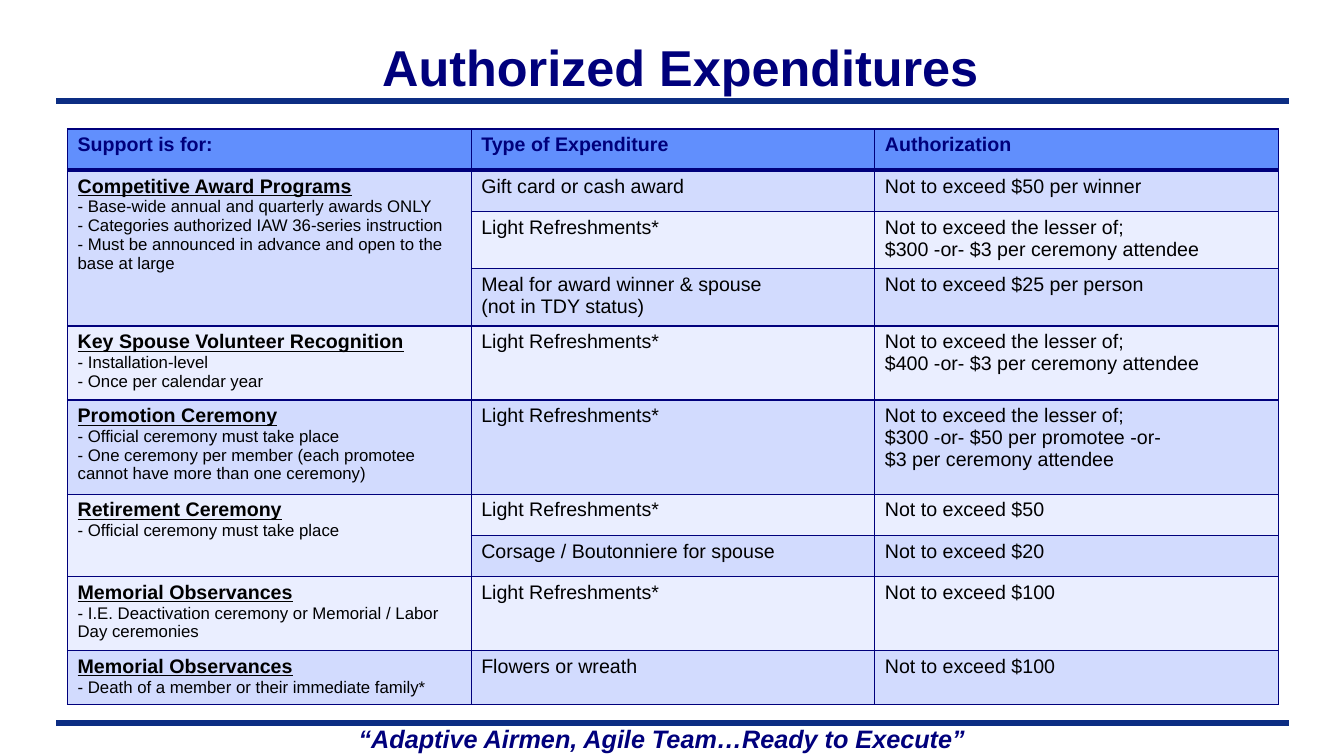
from lxml.etree import SubElement as Sub
from pptx import Presentation
from pptx.dml.color import RGBColor
from pptx.enum.shapes import MSO_CONNECTOR as Conn
from pptx.enum.text import MSO_ANCHOR as Anchor, PP_ALIGN as Align
from pptx.oxml.ns import qn
from pptx.util import Inches, Pt

NAVY, RULE, HEAD = "00007C", "0C2D83", "618FFD"
BANDS = "D2DBFE", "EAEEFF"
LIGHT = "Light Refreshments*"
LESSER = "Not to exceed the lesser of;\n"
HEADS = "Support is for:", "Type of Expenditure", "Authorization"

# Each group: support text, then its (expenditure, authorization) rows
GROUPS = [
    ("Competitive Award Programs\n"
     "- Base-wide annual and quarterly awards ONLY\n"
     "- Categories authorized IAW 36-series instruction\n"
     "- Must be announced in advance and open to the base at large",
     [("Gift card or cash award", "Not to exceed $50 per winner"),
      (LIGHT, LESSER + "$300 -or- $3 per ceremony attendee"),
      ("Meal for award winner & spouse\n(not in TDY status)",
       "Not to exceed $25 per person")]),
    ("Key Spouse Volunteer Recognition\n"
     "- Installation-level\n- Once per calendar year",
     [(LIGHT, LESSER + "$400 -or- $3 per ceremony attendee")]),
    ("Promotion Ceremony\n- Official ceremony must take place\n"
     "- One ceremony per member (each promotee cannot have more than one ceremony)",
     [(LIGHT, LESSER + "$300 -or- $50 per promotee -or-\n$3 per ceremony attendee")]),
    ("Retirement Ceremony\n- Official ceremony must take place",
     [(LIGHT, "Not to exceed $50"),
      ("Corsage / Boutonniere for spouse", "Not to exceed $20")]),
    ("Memorial Observances\n"
     "- I.E. Deactivation ceremony or Memorial / Labor Day ceremonies",
     [(LIGHT, "Not to exceed $100")]),
    ("Memorial Observances\n- Death of a member or their immediate family*",
     [("Flowers or wreath", "Not to exceed $100")]),
]


def color(code):
    return RGBColor.from_string(code)


def style(para, size, code, bold=False, italic=False, under=False):
    for run in para.runs:
        font = run.font
        font.name, font.size = "Arial", Pt(size)
        font.bold, font.italic, font.underline = bold, italic, under
        font.color.rgb = color(code)


def rule(slide, left, top, width):
    line = slide.shapes.add_connector(
        Conn.STRAIGHT, Inches(left), Inches(top), Inches(left + width), Inches(top))
    line.line.color.rgb = color(RULE)
    line.line.width = Pt(4.5)
    Sub(line._element.spPr, qn("a:effectLst"))


def label(slide, box, text, size, wrap=True, italic=False):
    frame = slide.shapes.add_textbox(*map(Inches, box)).text_frame
    frame.word_wrap = wrap
    frame.vertical_anchor = Anchor.MIDDLE if wrap else Anchor.TOP
    frame.text = text
    para = frame.paragraphs[0]
    para.alignment = Align.CENTER
    style(para, size, NAVY, True, italic)


def border(cell, **widths):
    props = cell._tc.get_or_add_tcPr()
    for side in "LRTB":
        line = Sub(props, qn("a:ln" + side), w=str(Pt(widths.get(side, 1))))
        fill = Sub(line, qn("a:solidFill"))
        Sub(fill, qn("a:srgbClr"), val=NAVY)


def paint(cell, code, **widths):
    border(cell, **widths)
    cell.fill.solid()
    cell.fill.fore_color.rgb = color(code)


def grid(slide, left, top, width):
    count = 1 + sum(len(rows) for _, rows in GROUPS)
    high = 0.41  # least height: rows grow to fit their text
    table = slide.shapes.add_table(
        count, 3, Inches(left), Inches(top), Inches(width), Inches(high * count)).table

    # Header and banded fills
    for num in range(count):
        for col in range(3):
            cell = table.cell(num, col)
            if num == 0:
                paint(cell, HEAD, B=3)
                cell.text = HEADS[col]
                style(cell.text_frame.paragraphs[0], 14, NAVY, True)
            else:
                paint(cell, BANDS[(num - 1) % 2], T=3 if num == 1 else 1)

    # Groups
    num = 1
    for lead, rows in GROUPS:
        cell = table.cell(num, 0)
        if len(rows) > 1:
            cell.merge(table.cell(num + len(rows) - 1, 0))
        cell.text = lead
        first, *rest = cell.text_frame.paragraphs
        style(first, 14, "000000", True, under=True)
        for para in rest:
            style(para, 12, "000000")
        for row in rows:
            for col, text in enumerate(row, 1):
                cell = table.cell(num, col)
                cell.text = text
                for para in cell.text_frame.paragraphs:
                    style(para, 14, "000000")
            num += 1


def main():
    deck = Presentation()
    deck.slide_width, deck.slide_height = Inches(13.33), Inches(7.5)
    slide = deck.slides.add_slide(deck.slide_layouts[6])
    # Rules and slogan
    for top in (7.17, 1):
        rule(slide, 0.56, top, 12.22)
    label(slide, (3.43, 7.13, 6.27, 0.4),
          "“Adaptive Airmen, Agile Team…Ready to Execute”", 18, False, True)
    # Title and table
    label(slide, (2.33, 0.26, 8.84, 0.8), "Authorized Expenditures", 36)
    grid(slide, 0.67, 1.28, 12.01)
    deck.save("out.pptx")


if __name__ == "__main__":
    main()
